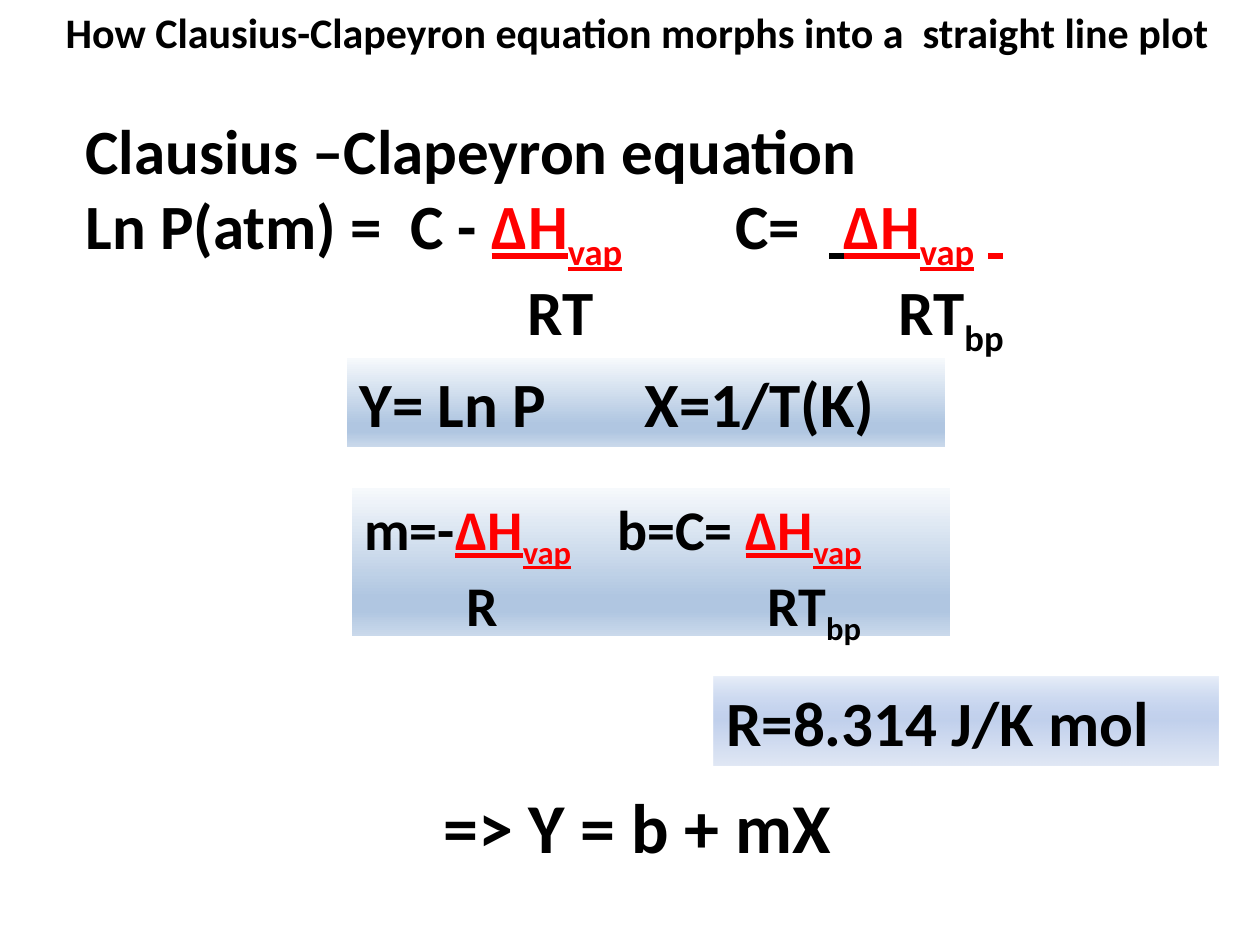
from lxml import etree
from pptx import Presentation, util as u
from pptx.dml.color import RGBColor
from pptx.enum import shapes, text
from pptx.oxml.ns import qn

PX = 914400 // 126
FONT = "Calibri"
COLORS = {"black": "000000", "red": "FF0000"}
# Gradient stops: position in percent, colour, opacity in percent
STEEL = [(0, "F6F9FC", 100), (74, "B0C6E1", 100), (83, "B0C6E1", 100), (100, "CAD9EB", 100)]
PERIWINKLE = [(0, "9AB5E4", 22), (50, "C2D1ED", 100), (100, "E1E8F5", 100)]

# Run styles: r = red, u = underlined, s = subscript
ENTHALPY = [("ΔH", "ru"), ("vap", "rus")]
BOILING_RT = [("RT", ""), ("bp", "s")]


def px(length):
    return u.Emu(length * PX)


def set_tabs(paragraph, stops):
    tab_list = etree.Element(qn("a:tabLst"))
    for stop in stops:
        etree.SubElement(tab_list, qn("a:tab"), pos=str(px(stop)), algn="l")
    properties = paragraph._p.get_or_add_pPr()
    properties.insert_element_before(tab_list, "a:defRPr", "a:extLst")


def write_lines(shape, size, lines):
    """Fill a shape with lines, each a pair of runs and tab stops."""
    frame = shape.text_frame
    frame.word_wrap = True
    frame.auto_size = text.MSO_AUTO_SIZE.NONE
    frame.vertical_anchor = text.MSO_ANCHOR.TOP
    for index, (runs, stops) in enumerate(lines):
        paragraph = frame.paragraphs[0] if index == 0 else frame.add_paragraph()
        paragraph.alignment = text.PP_ALIGN.LEFT
        paragraph.font.name = FONT
        paragraph.font.size = u.Pt(size)
        paragraph.font.bold = True
        paragraph.font.color.rgb = RGBColor.from_string(COLORS["black"])
        if stops:
            set_tabs(paragraph, stops)
        for words, style in runs:
            run = paragraph.add_run()
            run.text = words
            # Shapes carry their own text colour, so each run names its colour
            color = COLORS["red" if "r" in style else "black"]
            run.font.color.rgb = RGBColor.from_string(color)
            if "u" in style:
                run.font.underline = True
            if "s" in style:
                run._r.get_or_add_rPr().set("baseline", "-25000")


def fill_gradient(shape, stops):
    shape.fill.gradient()
    shape.fill.gradient_angle = 270
    stop_list = shape._element.spPr.find(qn("a:gradFill")).find(qn("a:gsLst"))
    for old_stop in list(stop_list):
        stop_list.remove(old_stop)
    for position, color, opacity in stops:
        stop = etree.SubElement(stop_list, qn("a:gs"), pos=str(position * 1000))
        value = etree.SubElement(stop, qn("a:srgbClr"), val=color)
        if opacity < 100:
            etree.SubElement(value, qn("a:alpha"), val=str(opacity * 1000))


def add_title(slide, box, words):
    title = slide.shapes.title
    title.left, title.top, title.width, title.height = map(px, box)
    write_lines(title, 24, [([(words, "")], [])])


def add_text(slide, box, size, lines):
    write_lines(slide.shapes.add_textbox(*map(px, box)), size, lines)


def add_panel(slide, box, gradient, size, lines):
    panel = slide.shapes.add_shape(shapes.MSO_SHAPE.RECTANGLE, *map(px, box))
    panel.shadow.inherit = False
    panel.line.fill.background()
    fill_gradient(panel, gradient)
    write_lines(panel, size, lines)


def build_slide(presentation):
    slide = presentation.slides.add_slide(presentation.slide_layouts[5])
    add_title(slide, (53, 0, 1197, 63),
              "How Clausius-Clapeyron equation morphs into a  straight line plot")
    add_text(slide, (73, 105, 1082, 242), 36, [
        ([("Clausius –Clapeyron equation", "")], []),
        ([("Ln P(atm) =  C - ", ""), *ENTHALPY, ("\tC=\t", ""), (" ", "u"),
          *ENTHALPY, (" ", "r"), (" ", "ru")], [650, 744]),
        ([("\tRT\t", ""), *BOILING_RT], [442, 813]),
    ])
    add_panel(slide, (347, 358, 598, 89), STEEL, 36, [
        ([("Y= Ln P\tX=1/T(K)", "")], [285]),
    ])
    add_panel(slide, (352, 488, 598, 148), STEEL, 32, [
        ([("m=-", ""), *ENTHALPY, ("\tb=C= ", ""), *ENTHALPY], [253]),
        ([("\tR\t", ""), *BOILING_RT], [102, 403]),
    ])
    add_panel(slide, (714, 677, 504, 89), PERIWINKLE, 36, [
        ([("R=8.314 J/K mol", "")], []),
    ])
    add_text(slide, (431, 777, 472, 97), 40, [([("=> Y = b + mX", "")], [])])


def main():
    presentation = Presentation()
    presentation.slide_width = px(1260)
    presentation.slide_height = px(945)
    build_slide(presentation)
    presentation.save("out.pptx")


if __name__ == "__main__":
    main()
